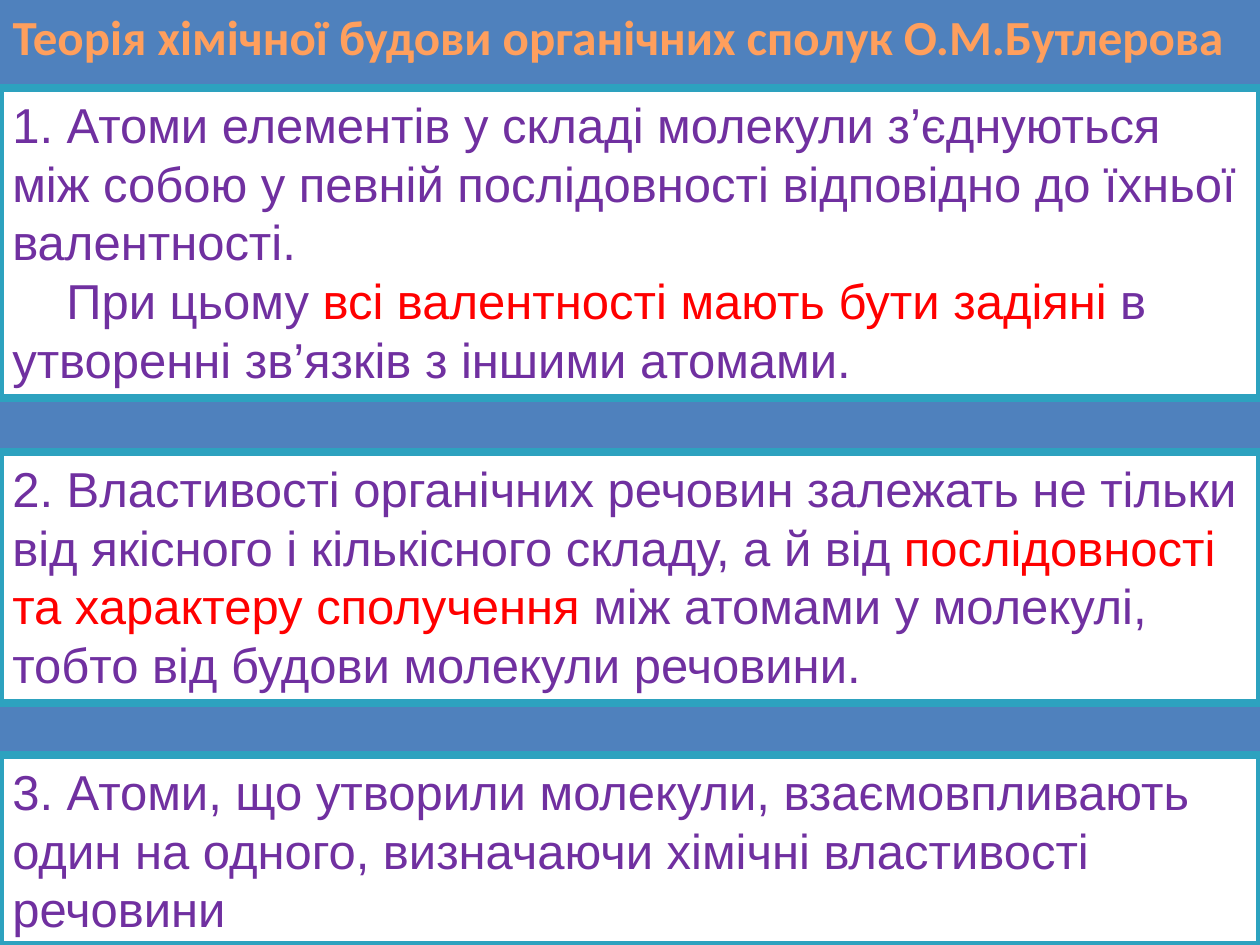
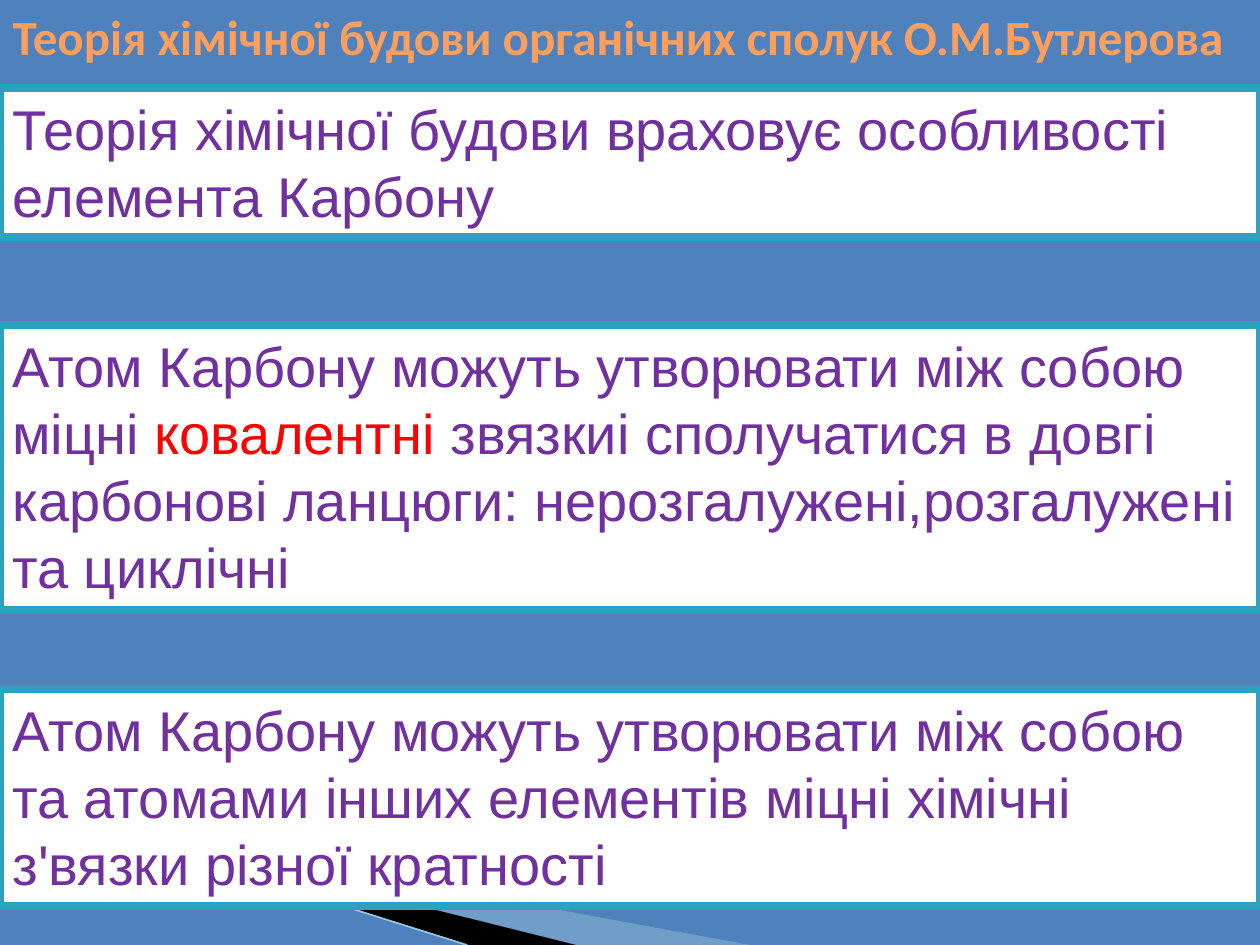
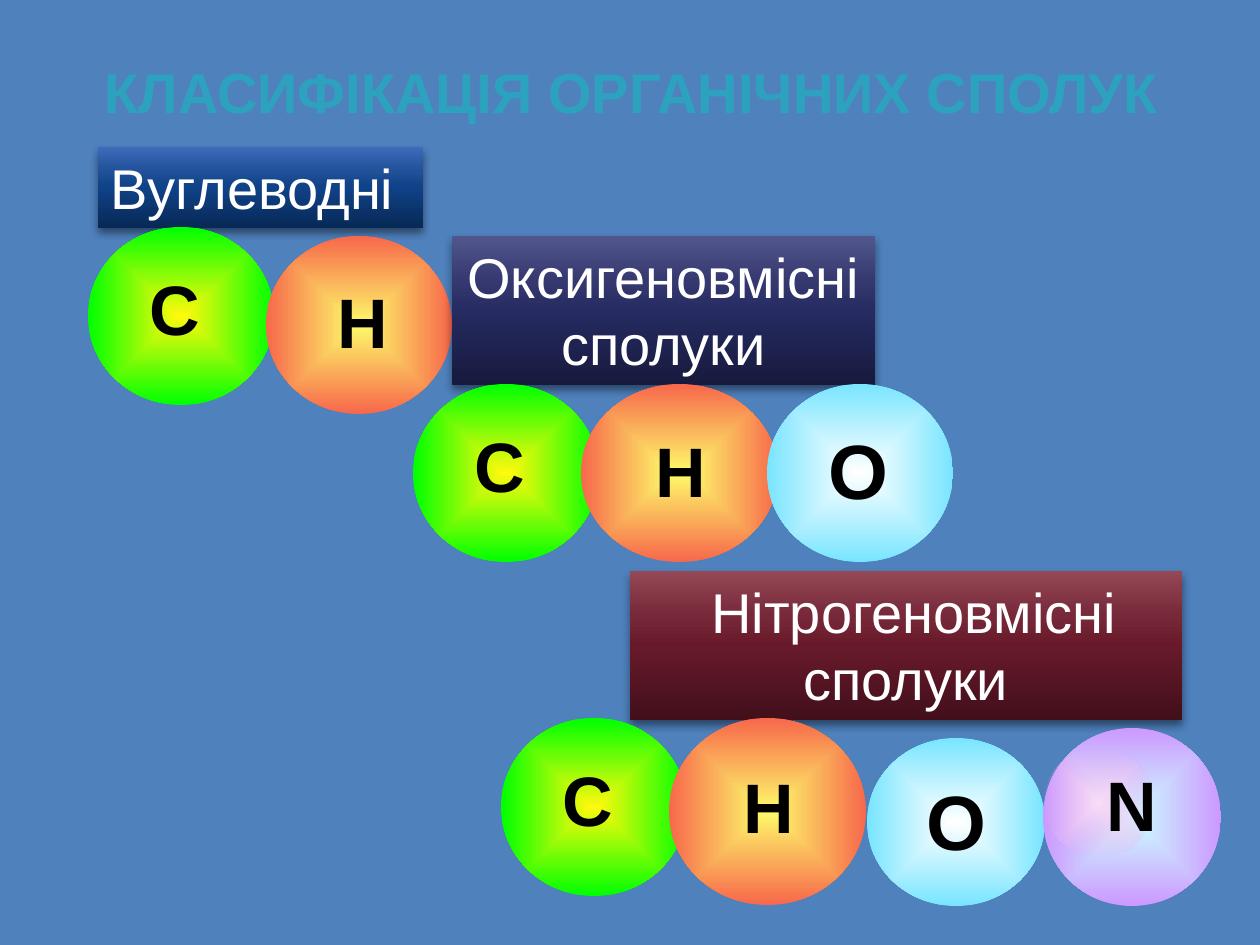
from typing import NamedTuple

import lxml.etree
import pptx
import pptx.dml.color
import pptx.enum.shapes
import pptx.enum.text
import pptx.oxml.ns
import pptx.util

RGB = pptx.dml.color.RGBColor
ALIGN = pptx.enum.text.PP_ALIGN
ANCHOR = pptx.enum.text.MSO_ANCHOR
PRESET = pptx.enum.shapes.MSO_SHAPE
qn = pptx.oxml.ns.qn

EMU_PER_PX = 914400 / 126
SLIDE_WIDTH, SLIDE_HEIGHT = 1260, 945

BLUE = RGB(0x4F, 0x81, 0xBD)
TEAL = RGB(0x2D, 0xA2, 0xBF)
PURPLE = RGB(0x70, 0x30, 0xA0)
RED = RGB(0xFF, 0x00, 0x00)
WHITE = RGB(0xFF, 0xFF, 0xFF)
BLACK = RGB(0x00, 0x00, 0x00)
PALE_BLUE = RGB(0xA0, 0xCB, 0xDC)
EDGE_BLUE = RGB(0x97, 0xC5, 0xD8)
LIGHT_ORANGE = RGB(0xFF, 0xA3, 0x67)
MID_ORANGE = RGB(0xFF, 0x9F, 0x5D)
DEEP_ORANGE = RGB(0xF3, 0x8E, 0x3A)


class Box(NamedTuple):
    left: int
    top: int
    width: int
    height: int


class Stop(NamedTuple):
    percent: int
    color: RGB
    opacity: int = 100


class Gradient(NamedTuple):
    stops: list[Stop]
    angle: int | None = None


class Span(NamedTuple):
    text: str
    color: RGB = PURPLE


class Line(NamedTuple):
    spans: list[Span]
    indent: int = 0


class Statement(NamedTuple):
    top: int
    height: int
    lines: list[Line]


class ClassLabel(NamedTuple):
    box: Box
    line: Line
    align: ALIGN
    gradient: Gradient


class Element(NamedTuple):
    symbol: str
    size: int
    gradient: Gradient
    dx: int
    dy: int
    inset: int
    glow: Gradient | None = None


class Atom(NamedTuple):
    element: Element
    box: Box


def label_gradient(*colors: RGB) -> Gradient:
    return Gradient([Stop(p, c) for p, c in zip((0, 50, 70, 100), colors)], 270)


def radial(center: RGB, edge: RGB, edge_opacity: int = 100) -> Gradient:
    return Gradient([Stop(0, center), Stop(100, edge, edge_opacity)])


THEORY_TITLE = "Теорія хімічної будови органічних сполук О.М.Бутлерова"
THEORY_GRADIENT = Gradient([
    Stop(0, LIGHT_ORANGE), Stop(25, MID_ORANGE), Stop(50, DEEP_ORANGE),
    Stop(75, MID_ORANGE), Stop(100, LIGHT_ORANGE)], 90)

POSTULATES = [
    Statement(88, 310, [
        Line([Span("1. Атоми елементів у складі молекули з’єднуються між собою "
                   "у певній послідовності відповідно до їхньої валентності.")]),
        Line([Span("При цьому "), Span("всі валентності мають бути задіяні ", RED),
              Span("в утворенні зв’язків з іншими атомами.")], 54)]),
    Statement(452, 251, [
        Line([Span("2. Властивості органічних речовин залежать не тільки від "
                   "якісного і кількісного складу, а й від "),
              Span("послідовності та характеру сполучення ", RED),
              Span("між атомами у молекулі, тобто від будови молекули речовини.")])]),
    Statement(755, 190, [
        Line([Span("3. Атоми, що утворили молекули, взаємовпливають один на "
                   "одного, визначаючи хімічні властивості речовини")])]),
]

CARBON_FEATURES = [
    Statement(88, 149, [
        Line([Span("Теорія хімічної будови враховує особливості елемента Карбону")])]),
    Statement(325, 285, [
        Line([Span("Атом Карбону можуть утворювати між собою міцні "),
              Span("ковалентні ", RED),
              Span("звязкиі сполучатися в довгі карбонові ланцюги: "
                   "нерозгалужені,розгалужені та циклічні")])]),
    Statement(689, 217, [
        Line([Span("Атом Карбону можуть утворювати між собою та атомами інших "
                   "елементів міцні хімічні з'вязки різної кратності")])]),
]

CLASS_LABELS = [
    ClassLabel(Box(98, 147, 325, 81), Line([Span("Вуглеводні", WHITE)]), ALIGN.LEFT,
               label_gradient(RGB(0x07, 0x29, 0x56), RGB(0x10, 0x42, 0x88),
                              RGB(0x20, 0x51, 0x99), RGB(0x3D, 0x6B, 0xB9))),
    ClassLabel(Box(452, 236, 423, 149), Line([Span("Оксигеновмісні сполуки", WHITE)]),
               ALIGN.CENTER,
               label_gradient(RGB(0x17, 0x1A, 0x3D), RGB(0x26, 0x2B, 0x61),
                              RGB(0x35, 0x39, 0x70), RGB(0x51, 0x56, 0x8D))),
    ClassLabel(Box(630, 571, 552, 149), Line([Span("Нітрогеновмісні сполуки", WHITE)], 16),
               ALIGN.CENTER,
               label_gradient(RGB(0x42, 0x0F, 0x1A), RGB(0x68, 0x1A, 0x2B),
                              RGB(0x77, 0x29, 0x39), RGB(0x94, 0x47, 0x55))),
]

CARBON = Element("С", 40, radial(RGB(0xFF, 0xF9, 0x0D), RGB(0x00, 0xFF, 0x00)), 9, 26, 41)
HYDROGEN = Element("H", 40, radial(RGB(0xFD, 0xFA, 0x6A), RGB(0xF7, 0x68, 0x4B)), 10, 30, 58)
OXYGEN = Element("O", 44, radial(WHITE, RGB(0x79, 0xE5, 0xFF)), 11, 30, 47)
NITROGEN = Element("N", 40, radial(RGB(0xCC, 0xFF, 0xFF), RGB(0xCC, 0x99, 0xFF)), 0, 20, 68,
                   radial(RGB(0xFC, 0xDF, 0xF8), RGB(0xF7, 0xA7, 0xED), 0))

MOLECULES = [
    [Atom(CARBON, Box(88, 227, 186, 178)), Atom(HYDROGEN, Box(266, 236, 186, 178))],
    [Atom(CARBON, Box(413, 384, 186, 178)), Atom(HYDROGEN, Box(581, 384, 197, 178)),
     Atom(OXYGEN, Box(767, 384, 186, 178))],
    [Atom(CARBON, Box(501, 718, 186, 178)), Atom(HYDROGEN, Box(669, 718, 197, 187)),
     Atom(OXYGEN, Box(867, 738, 178, 168)), Atom(NITROGEN, Box(1043, 728, 178, 178))],
]


def px(length: float) -> pptx.util.Emu:
    return pptx.util.Emu(round(length * EMU_PER_PX))


def add_node(parent, tag: str, **attributes):
    return lxml.etree.SubElement(
        parent, qn(tag), {key: str(value) for key, value in attributes.items()})


def apply_gradient(fill, properties, gradient: Gradient) -> None:
    fill.gradient()
    node = properties.find(qn("a:gradFill"))
    node[:] = []
    stops = add_node(node, "a:gsLst")
    for stop in gradient.stops:
        mark = add_node(stops, "a:gs", pos=stop.percent * 1000)
        color = add_node(mark, "a:srgbClr", val=stop.color)
        if stop.opacity < 100:
            add_node(color, "a:alpha", val=stop.opacity * 1000)
    if gradient.angle is None:
        shade = add_node(node, "a:path", path="shape")
        add_node(shade, "a:fillToRect", l=50000, t=50000, r=50000, b=50000)
    else:
        add_node(node, "a:lin", ang=gradient.angle * 60000, scaled=0)


def add_run(paragraph, span: Span, size: int, font: str = "Arial", bold: bool = False):
    run = paragraph.add_run()
    run.text = span.text
    run.font.name = font
    run.font.size = pptx.util.Pt(size)
    run.font.bold = bold
    run.font.color.rgb = span.color
    return run


def write_lines(frame, lines: list[Line], size: int, align: ALIGN = ALIGN.LEFT) -> None:
    frame.word_wrap = True
    frame.vertical_anchor = ANCHOR.TOP
    for index, line in enumerate(lines):
        paragraph = frame.add_paragraph() if index else frame.paragraphs[0]
        paragraph.alignment = align
        if line.indent:
            properties = paragraph._p.get_or_add_pPr()
            properties.set("marL", "0")
            properties.set("indent", str(px(line.indent)))
        for span in line.spans:
            add_run(paragraph, span, size)


def add_plain_shape(shapes, preset: PRESET, box: Box):
    shape = shapes.add_shape(preset, *map(px, box))
    shape.fill.background()
    shape.line.fill.background()
    shape.shadow.inherit = False
    return shape


def add_slide(deck, title: str, box: Box, color: RGB, size: int, font: str,
              align: ALIGN, anchor: ANCHOR, gradient: Gradient | None = None):
    slide = deck.slides.add_slide(deck.slide_layouts[5])
    heading = slide.shapes.title
    heading.left, heading.top, heading.width, heading.height = map(px, box)
    frame = heading.text_frame
    frame.word_wrap = True
    frame.auto_size = pptx.enum.text.MSO_AUTO_SIZE.NONE
    frame.vertical_anchor = anchor
    frame.paragraphs[0].alignment = align
    run = add_run(frame.paragraphs[0], Span(title, color), size, font, True)
    if gradient:
        apply_gradient(run.font.fill, run._r.get_or_add_rPr(), gradient)
    return slide


def add_wedge(slide, points: list[tuple[int, int]], color: RGB, opacity: int = 100) -> None:
    builder = slide.shapes.build_freeform(*points[0], scale=EMU_PER_PX)
    builder.add_line_segments(points[1:], close=True)
    wedge = builder.convert_to_shape()
    wedge.fill.solid()
    wedge.fill.fore_color.rgb = color
    wedge.line.fill.background()
    wedge.shadow.inherit = False
    if opacity < 100:
        tint = wedge._element.spPr.find(qn("a:solidFill")).find(qn("a:srgbClr"))
        add_node(tint, "a:alpha", val=opacity * 1000)


def add_corner(slide) -> None:
    add_wedge(slide, [(69, 820), (750, SLIDE_HEIGHT), (575, SLIDE_HEIGHT)], PALE_BLUE, 40)
    add_wedge(slide, [(67, 818), (576, SLIDE_HEIGHT), (469, SLIDE_HEIGHT)], BLACK)
    edge = slide.shapes.add_connector(
        pptx.enum.shapes.MSO_CONNECTOR.STRAIGHT, px(0), px(798), px(467), px(SLIDE_HEIGHT))
    edge.line.color.rgb = EDGE_BLUE
    edge.line.width = pptx.util.Pt(0.95)
    add_node(edge._element.spPr, "a:effectLst")


def add_theory_slide(deck, statements: list[Statement], size: int, corner: bool) -> None:
    slide = add_slide(deck, THEORY_TITLE, Box(0, 0, SLIDE_WIDTH, 72), MID_ORANGE, 28,
                      "Calibri", ALIGN.LEFT, ANCHOR.TOP, THEORY_GRADIENT)
    if corner:
        add_corner(slide)
    for statement in statements:
        panel = add_plain_shape(slide.shapes, PRESET.RECTANGLE,
                                Box(0, statement.top, SLIDE_WIDTH, statement.height))
        panel.fill.solid()
        panel.fill.fore_color.rgb = WHITE
        panel.line.color.rgb = TEAL
        panel.line.width = pptx.util.Pt(4.33)
        write_lines(panel.text_frame, statement.lines, size)


def add_class_label(slide, label: ClassLabel) -> None:
    plate = add_plain_shape(slide.shapes, PRESET.RECTANGLE, label.box)
    properties = plate._element.spPr
    apply_gradient(plate.fill, properties, label.gradient)
    shadow = add_node(properties.find(qn("a:effectLst")), "a:outerShdw",
                      blurRad=pptx.util.Pt(5), dist=pptx.util.Pt(3),
                      dir=90 * 60000, rotWithShape=0)
    add_node(add_node(shadow, "a:srgbClr", val=BLACK), "a:alpha", val=45000)
    write_lines(plate.text_frame, [label.line], 32, label.align)


def add_atom(slide, atom: Atom) -> None:
    element, box = atom
    group = slide.shapes.add_group_shape()
    ball = add_plain_shape(group.shapes, PRESET.OVAL, box)
    apply_gradient(ball.fill, ball._element.spPr, element.gradient)
    core = add_plain_shape(group.shapes, PRESET.OVAL, Box(
        box.left + element.dx, box.top + element.dy,
        round(box.width * 0.62), round(box.height * 0.62)))
    if element.glow:
        apply_gradient(core.fill, core._element.spPr, element.glow)
    frame = core.text_frame
    frame.word_wrap = False
    frame.vertical_anchor = ANCHOR.MIDDLE
    frame.margin_left = px(element.inset)
    frame.margin_right = frame.margin_top = frame.margin_bottom = 0
    frame.paragraphs[0].alignment = ALIGN.CENTER
    add_run(frame.paragraphs[0], Span(element.symbol, BLACK), element.size, bold=True)


def add_classification_slide(deck) -> None:
    slide = add_slide(deck, "КЛАСИФІКАЦІЯ ОРГАНІЧНИХ СПОЛУК", Box(63, 38, 1138, 107), TEAL,
                      32, "Arial", ALIGN.CENTER, ANCHOR.MIDDLE)
    for label, molecule in zip(CLASS_LABELS, MOLECULES):
        add_class_label(slide, label)
        for atom in molecule:
            add_atom(slide, atom)


def main() -> None:
    deck = pptx.Presentation()
    deck.slide_width, deck.slide_height = px(SLIDE_WIDTH), px(SLIDE_HEIGHT)
    backdrop = deck.slide_master.background.fill
    backdrop.solid()
    backdrop.fore_color.rgb = BLUE
    add_theory_slide(deck, POSTULATES, 28, corner=False)
    add_theory_slide(deck, CARBON_FEATURES, 32, corner=True)
    add_classification_slide(deck)
    deck.save("out.pptx")


if __name__ == "__main__":
    main()
